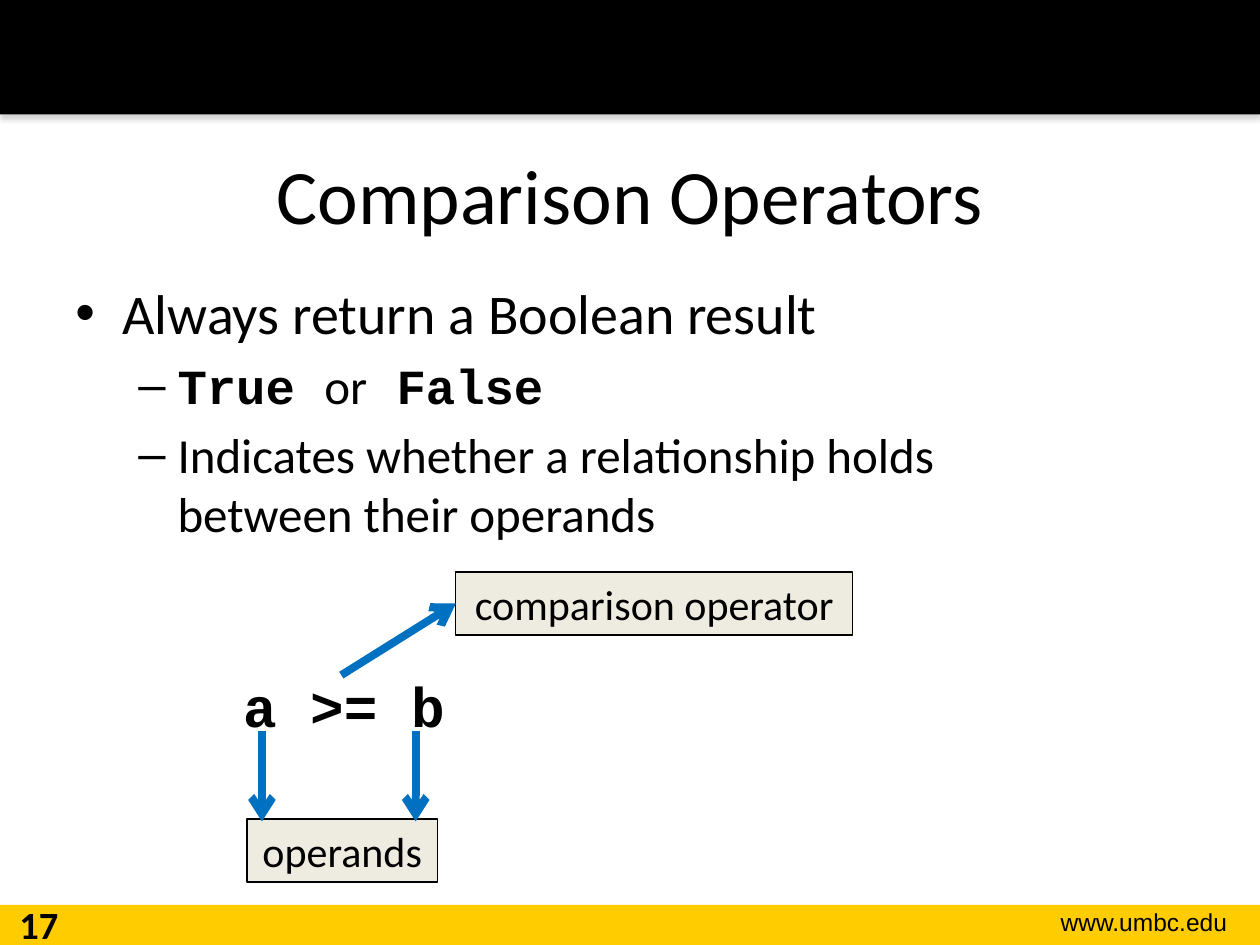
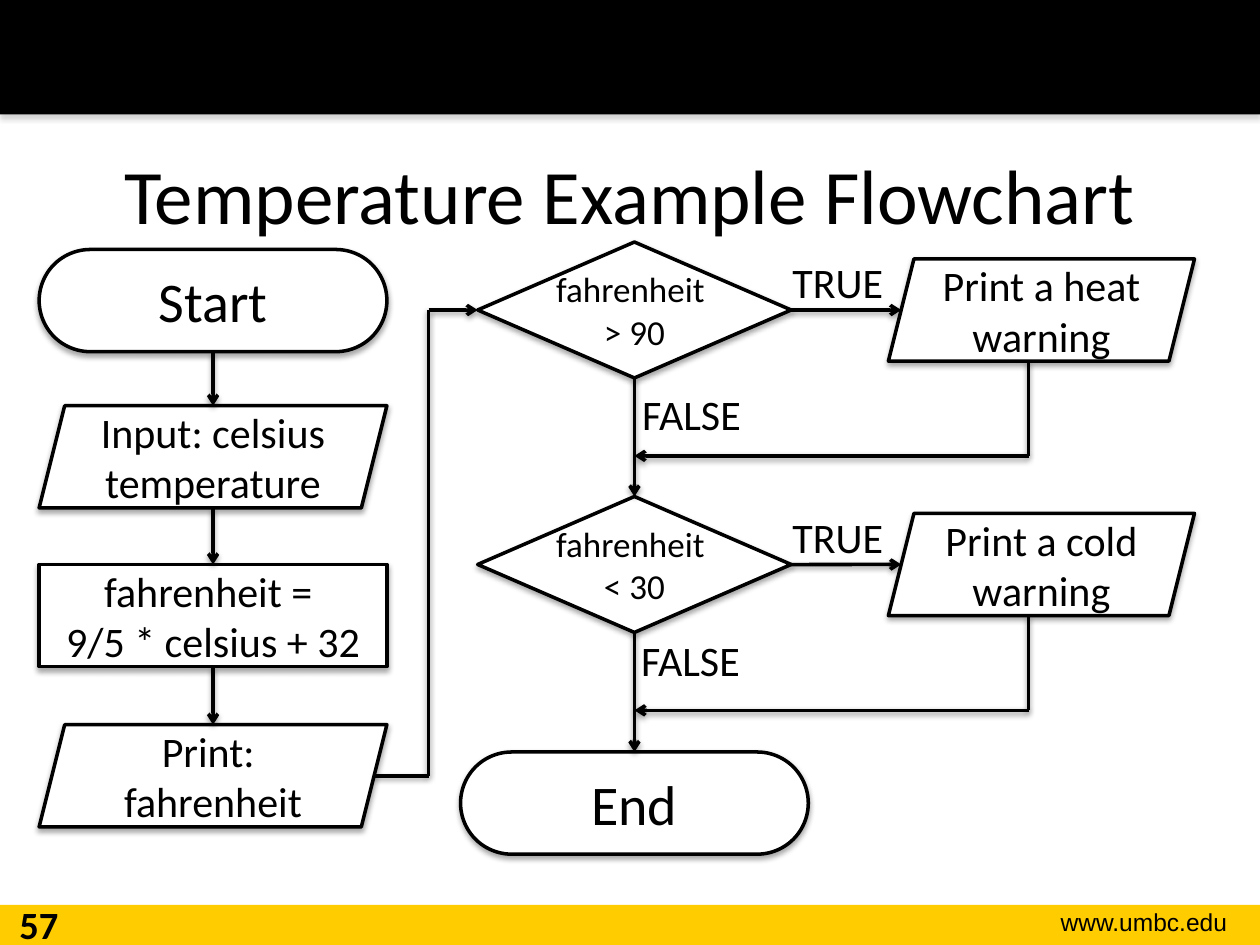
from dataclasses import dataclass

from lxml import etree
from pptx import Presentation
from pptx.dml.color import RGBColor
from pptx.enum import shapes, text
from pptx.oxml.ns import qn
from pptx.util import Cm, Pt

SHAPE = shapes.MSO_SHAPE
ALIGN = text.PP_ALIGN
ANCHOR = text.MSO_ANCHOR
TOP, LEFT, BOTTOM, RIGHT = range(4)


@dataclass(frozen=True)
class Theme:
    black: str = "000000"
    white: str = "FFFFFF"
    gold: str = "FFCC00"
    cream: str = "EEECE1"
    blue: str = "0070C0"
    grey: str = "808080"
    body: str = "Calibri"
    mono: str = "Courier New"
    web: str = "Arial"
    title: int = 44
    large: int = 32
    medium: int = 28
    normal: int = 24
    number: int = 22
    small: int = 20
    tiny: int = 14


T = Theme()


# Formatting helpers
def style(r, size, font=T.body, bold=False):
    r.font.size = Pt(size)
    r.font.name = font
    r.font.bold = bold
    r.font.color.rgb = RGBColor.from_string(T.black)


def write(sp, content, size, font=T.body, bold=False, align=ALIGN.CENTER,
          anchor=ANCHOR.TOP, wrap=True):
    tf = sp.text_frame
    tf.word_wrap = wrap
    tf.vertical_anchor = anchor
    p = tf.paragraphs[0]
    p.text = content
    p.alignment = align
    for r in p.runs:
        style(r, size, font, bold)


def add_shadow(effects, colour, alpha, distance):
    shadow = etree.SubElement(effects, qn("a:outerShdw"), blurRad="40000",
                              dist=str(distance), dir="5400000", rotWithShape="0")
    clr = etree.SubElement(shadow, qn("a:srgbClr"), val=colour)
    etree.SubElement(clr, qn("a:alpha"), val=str(alpha * 1000))


# Elements
def add_label(s, box, content, size, **options):
    sp = s.shapes.add_textbox(*map(Cm, box))
    write(sp, content, size, **options)
    return sp


def add_box(s, kind, box, fill, line=None, shadow=None):
    """Preset shape; line is the outline width, shadow its colour."""
    sp = s.shapes.add_shape(kind, *map(Cm, box))
    sp.fill.solid()
    sp.fill.fore_color.rgb = RGBColor.from_string(fill)
    if line:
        sp.line.color.rgb = RGBColor.from_string(T.black)
        sp.line.width = Pt(line)
    else:
        sp.line.fill.background()
    sp.shadow.inherit = False
    if shadow:
        add_shadow(sp._element.spPr.find(qn("a:effectLst")), shadow, 35, 23000)
    return sp


def add_line(s, start, end, colour=T.black, width=2, arrow=True, shadow=True):
    """Each end is an (x, y) point in cm or a (shape, side) pair to join."""
    joins = [not isinstance(e[0], (int, float)) for e in (start, end)]
    points = [(0, 0) if join else e for join, e in zip(joins, (start, end))]
    c = s.shapes.add_connector(shapes.MSO_CONNECTOR.STRAIGHT,
                               *[Cm(v) for point in points for v in point])
    if joins[0]:
        c.begin_connect(*start)
    if joins[1]:
        c.end_connect(*end)
    c.line.color.rgb = RGBColor.from_string(colour)
    c.line.width = Pt(width)
    sp_pr = c._element.spPr
    if arrow:
        etree.SubElement(sp_pr.find(qn("a:ln")), qn("a:tailEnd"), type="arrow")
    effects = etree.SubElement(sp_pr, qn("a:effectLst"))
    if shadow:
        add_shadow(effects, T.black, 38, 20000)


def add_bullets(s, box, items):
    """Items are (level, [(text, font), ...]); code fonts are bold."""
    levels = [("•", 0.95, 0.95, T.large), ("–", 2.06, 0.79, T.medium)]
    tf = s.shapes.add_textbox(*map(Cm, box)).text_frame
    tf.word_wrap = True
    for i, (level, parts) in enumerate(items):
        char, margin, hang, size = levels[level]
        p = tf.add_paragraph() if i else tf.paragraphs[0]
        p_pr = p._p.get_or_add_pPr()
        p_pr.set("marL", str(Cm(margin)))
        p_pr.set("indent", str(-Cm(hang)))
        etree.SubElement(p_pr, qn("a:buFont"), typeface=T.web)
        etree.SubElement(p_pr, qn("a:buChar"), char=char)
        if i:
            p.space_before = Pt(size * 0.2)
        for content, font in parts:
            for n, row in enumerate(content.split("\v")):
                if n:
                    p.add_line_break()
                r = p.add_run()
                r.text = row
                style(r, size, font, font == T.mono)


def add_slide(prs, title, number):
    """Blank slide with bands, footer, title and slide number."""
    s = prs.slides.add_slide(prs.slide_layouts[6])
    add_box(s, SHAPE.RECTANGLE, (0, 18.24, 25.4, 0.81), T.gold)
    add_box(s, SHAPE.RECTANGLE, (0, 0, 25.4, 2.31), T.black, shadow=T.grey)
    add_label(s, (19.94, 18.16, 5.05, 0.86), "www.umbc.edu", T.tiny,
              font=T.web, align=ALIGN.RIGHT)
    add_label(s, (1.27, 2.31, 22.86, 3.18), title, T.title, anchor=ANCHOR.MIDDLE)
    add_label(s, (0, 18.03, 1.57, 1.02), number, T.number, bold=True)
    return s


def add_step(s, kind, box, content, size=T.normal):
    sp = add_box(s, kind, box, T.white, 2, T.black)
    if kind == SHAPE.ROUNDED_RECTANGLE:
        sp.adjustments[0] = 0.5
    write(sp, content, size, anchor=ANCHOR.MIDDLE,
          wrap=kind != SHAPE.DIAMOND and kind != SHAPE.FLOWCHART_DECISION)
    return sp


# Slides
def comparison_slide(prs):
    s = add_slide(prs, "Comparison Operators", "17")
    add_bullets(s, (1.27, 5.49, 22.86, 6), [
        (0, [("Always return a Boolean result", T.body)]),
        (1, [("True ", T.mono), ("or", T.body), (" False", T.mono)]),
        (1, [("Indicates whether a relationship holds \v"
              "between their operands", T.body)]),
    ])
    callouts = []
    for box, name in [((4.98, 16.51, 3.84, 1.27), "operands"),
                      ((9.19, 11.53, 8, 1.27), "comparison operator")]:
        sp = add_box(s, SHAPE.RECTANGLE, box, T.cream, 0.75)
        write(sp, name, T.normal)
        callouts.append(sp)
    add_label(s, (4.65, 13.41, 4.8, 1.63), "a >= b", T.large, font=T.mono,
              bold=True, align=ALIGN.LEFT)

    # Arrows from the expression to its callouts
    pairs = [((6.88, 13.61), (callouts[1], LEFT))]
    pairs += [((x, 14.73), (x, 16.56)) for x in (5.28, 8.38)]
    for start, end in pairs:
        add_line(s, start, end, T.blue, 4.5, shadow=False)


def flowchart_slide(prs):
    s = add_slide(prs, "Temperature Example Flowchart", "57")
    step_x, step_w, step_h = 0.79, 7.01, 2.06
    test_x, test_w, test_h = 9.63, 6.32, 2.74
    warn_x, warn_w = 17.91, 6.17
    slant = step_h / 8  # half of a parallelogram's slant
    step_mid, test_mid = step_x + step_w / 2, test_x + test_w / 2

    # Left column; parallelograms are met at plain points
    steps = [
        (SHAPE.ROUNDED_RECTANGLE, 5.03, "Start", T.large),
        (SHAPE.PARALLELOGRAM, 8.18, "Input: celsius temperature", T.normal),
        (SHAPE.RECTANGLE, 11.38, "fahrenheit = \v9/5 * celsius + 32", T.normal),
        (SHAPE.PARALLELOGRAM, 14.61, "Print: \vfahrenheit", T.normal),
    ]
    leave = None
    for kind, y, content, size in steps:
        sp = add_step(s, kind, (step_x, y, step_w, step_h), content, size)
        slanted = kind == SHAPE.PARALLELOGRAM
        if leave:
            add_line(s, leave, (step_mid, y) if slanted else (sp, TOP))
        leave = (step_mid, y + step_h) if slanted else (sp, BOTTOM)

    # Tests, each with a warning that rejoins the main path
    tests = []
    for y, sign, kind, false_x, false_y in [
            (4.88, "> 90", "heat", 11.91, 7.7), (10.01, "< 30", "cold", 11.89, 12.67)]:
        test = add_step(s, SHAPE.FLOWCHART_DECISION, (test_x, y, test_w, test_h),
                        f"fahrenheit \v{sign}", T.small)
        warn_y = y + (test_h - step_h) / 2
        add_step(s, SHAPE.PARALLELOGRAM, (warn_x, warn_y, warn_w, step_h),
                 f"Print a {kind} warning")
        add_label(s, (14.86, y + 0.17, 4.06, 1.27), "TRUE", T.normal)
        add_label(s, (false_x, false_y, 4.06, 1.27), "FALSE", T.normal)
        add_line(s, (test, RIGHT), (warn_x + slant, y + test_h / 2))
        back_x, back_y = warn_x + warn_w / 2 - slant, y + 4.31
        add_line(s, (back_x, warn_y + step_h), (back_x, back_y), arrow=False)
        add_line(s, (back_x, back_y), (test_mid, back_y))
        tests.append(test)

    end = add_step(s, SHAPE.ROUNDED_RECTANGLE,
                   (test_mid - step_w / 2, 15.16, step_w, step_h), "End", T.large)
    for upper, lower in zip(tests, tests[1:] + [end]):
        add_line(s, (upper, BOTTOM), (lower, TOP))

    # Path from the last step up to the first test
    turn_x, low_y, high_y = 8.64, 14.61 + step_h / 2, 4.88 + test_h / 2
    add_line(s, (turn_x, low_y), (step_x + step_w - slant, low_y), arrow=False)
    add_line(s, (turn_x, low_y), (turn_x, high_y), arrow=False)
    add_line(s, (turn_x, high_y), (tests[0], LEFT))


def main():
    prs = Presentation()
    prs.slide_width, prs.slide_height = Cm(25.4), Cm(19.05)
    comparison_slide(prs)
    flowchart_slide(prs)
    prs.save("out.pptx")


if __name__ == "__main__":
    main()
